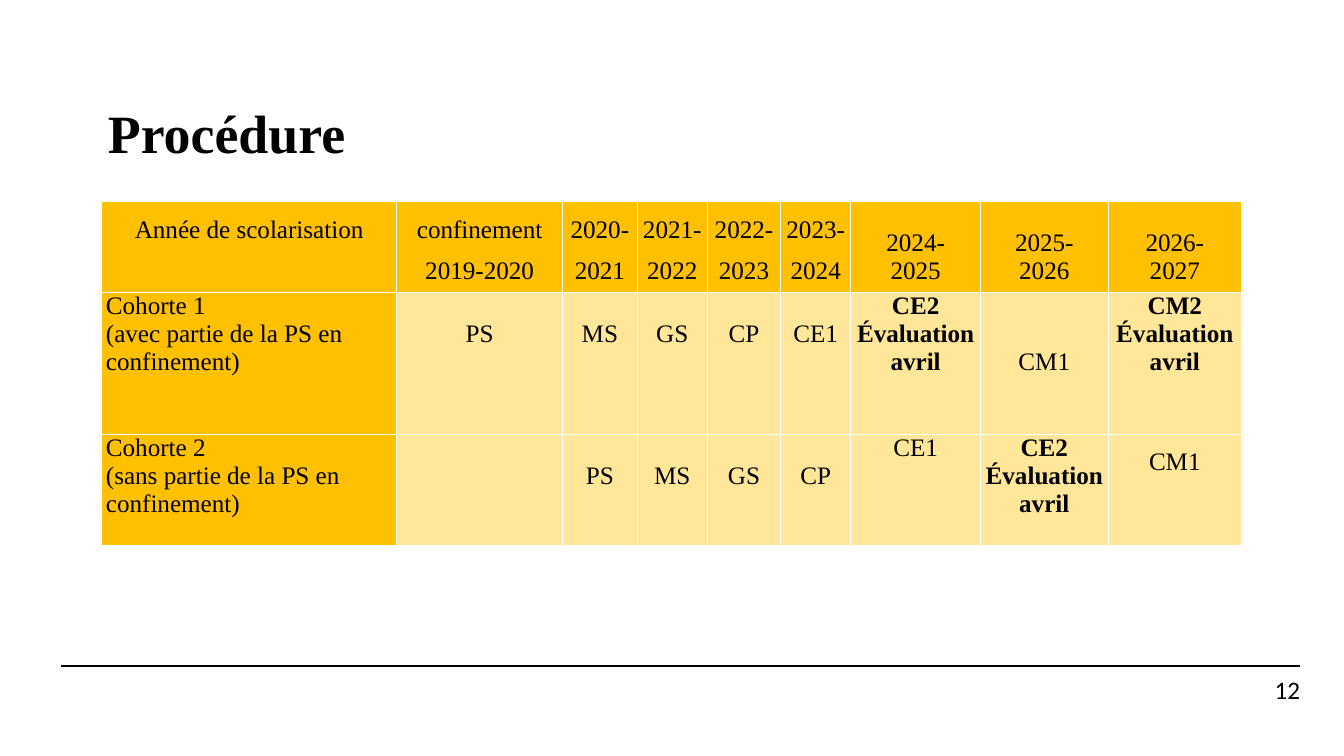
from dataclasses import dataclass

from lxml.etree import SubElement
from pptx import Presentation
from pptx.dml.color import RGBColor
from pptx.enum.text import MSO_ANCHOR, MSO_AUTO_SIZE, PP_ALIGN
from pptx.oxml.ns import qn
from pptx.util import Pt


@dataclass(frozen=True)
class Theme:
    font: str = "Times New Roman"
    number_font: str = "Calibri"
    title_size: int = 60
    body_size: int = 28
    line_height: int = 31
    ink: str = "000000"
    border: str = "FFFFFF"
    header: str = "FFC000"
    body: str = "FFE699"


@dataclass(frozen=True)
class Entry:
    """Content of a table cell; skip is the number of lines left free above."""
    lines: tuple = ()
    skip: int = 0
    spacing: float = 1.0
    bold: bool = False


class SlideBuilder:
    def __init__(self, slide, theme):
        self.slide = slide
        self.theme = theme

    def style(self, paragraph, size, name, bold=False, alignment=PP_ALIGN.LEFT, spacing=1.0):
        paragraph.alignment = alignment
        paragraph.line_spacing = spacing
        paragraph.font.size = Pt(size)
        paragraph.font.name = name
        paragraph.font.bold = bold
        paragraph.font.color.rgb = RGBColor.from_string(self.theme.ink)

    def title(self, text, left, top, width, height):
        shape = self.slide.shapes.title
        shape.left, shape.top, shape.width, shape.height = map(Pt, (left, top, width, height))
        frame = shape.text_frame
        frame.text = text
        frame.auto_size = MSO_AUTO_SIZE.NONE
        frame.vertical_anchor = MSO_ANCHOR.MIDDLE
        self.style(frame.paragraphs[0], self.theme.title_size, self.theme.font, True, spacing=0.9)

    def rule(self, left, right, top, weight):
        line = self.slide.shapes.add_connector(1, Pt(left), Pt(top), Pt(right), Pt(top))
        line.line.color.rgb = RGBColor.from_string(self.theme.ink)
        line.line.width = Pt(weight)
        SubElement(line._element.spPr, qn("a:effectLst"))

    def page_number(self, text, left, top, width, height):
        frame = self.slide.shapes.add_textbox(*map(Pt, (left, top, width, height))).text_frame
        frame.margin_left = frame.margin_right = frame.margin_top = frame.margin_bottom = 0
        frame.word_wrap = True
        frame.vertical_anchor = MSO_ANCHOR.MIDDLE
        frame.text = text
        self.style(frame.paragraphs[0], self.theme.body_size, self.theme.number_font,
                   alignment=PP_ALIGN.RIGHT)

    def borders(self, cell, weight):
        properties = cell._tc.get_or_add_tcPr()
        for position, side in enumerate(("lnL", "lnR", "lnT", "lnB")):
            line = properties.makeelement(qn(f"a:{side}"), {"w": str(Pt(weight))})
            fill = SubElement(line, qn("a:solidFill"))
            SubElement(fill, qn("a:srgbClr"), val=self.theme.border)
            properties.insert(position, line)

    def cell(self, cell, entry, fill, alignment):
        cell.margin_left = cell.margin_right = Pt(5)
        cell.margin_top = Pt(entry.skip * self.theme.line_height)
        cell.margin_bottom = 0
        cell.fill.solid()
        cell.fill.fore_color.rgb = RGBColor.from_string(fill)
        self.borders(cell, 1)
        cell.text = "\n".join(entry.lines)
        for paragraph in cell.text_frame.paragraphs:
            self.style(paragraph, self.theme.body_size, self.theme.font, entry.bold,
                       alignment, entry.spacing)

    def table(self, left, top, widths, heights, rows):
        table = self.slide.shapes.add_table(
            len(rows), len(widths), Pt(left), Pt(top), Pt(sum(widths)), Pt(sum(heights))).table
        for column, width in zip(table.columns, widths):
            column.width = Pt(width)
        for row, height in zip(table.rows, heights):
            row.height = Pt(height)
        for row_index, entries in enumerate(rows):
            for column_index, entry in enumerate(entries):
                is_header = row_index == 0 or column_index == 0
                is_label = row_index > 0 and column_index == 0
                self.cell(table.cell(row_index, column_index), entry,
                          self.theme.header if is_header else self.theme.body,
                          PP_ALIGN.LEFT if is_label else PP_ALIGN.CENTER)


def grades(*names):
    return [Entry((name,), skip=1) for name in names]


def evaluation(grade):
    return Entry((grade, "Évaluation avril"), bold=True)


def main():
    presentation = Presentation()
    presentation.slide_width, presentation.slide_height = Pt(1496.88), Pt(841.68)
    slide = presentation.slides.add_slide(presentation.slide_layouts[5])
    builder = SlideBuilder(slide, Theme())

    # Footer
    builder.rule(67.7, 1448, 741.6, 2)
    builder.page_number("12", 1283, 751, 165, 34)

    # Title
    builder.title("Procédure", 113, 121, 756, 60)

    # Table of cohorts by school year
    wide_headers = ["Année de scolarisation", "confinement 2019-2020",
                    "2020-2021", "2021-2022", "2022-2023"]
    header = [Entry((text,), spacing=1.5) for text in wide_headers]
    header.append(Entry(("2023-", "2024"), spacing=1.5))
    header += [Entry((f"{year}-", f"{year + 1}"), skip=1) for year in range(2024, 2027)]

    first_cohort = [
        Entry(("Cohorte 1", "(avec partie de la PS en confinement)")),
        *grades("PS", "MS", "GS", "CP", "CE1"),
        evaluation("CE2"), Entry(("CM1",), skip=2), evaluation("CM2")]
    second_cohort = [
        Entry(("Cohorte 2", "(sans partie de la PS en confinement)")), Entry(),
        *grades("PS", "MS", "GS", "CP"),
        Entry(("CE1",)), evaluation("CE2"), Entry(("CM1",), spacing=1.5)]

    builder.table(113, 224.6,
                  [329, 184.4, 83.5, 77.8, 82, 77.8, 144.8, 141.8, 149],
                  [93.5, 158, 123.5],
                  [header, first_cohort, second_cohort])

    presentation.save("out.pptx")


if __name__ == "__main__":
    main()
